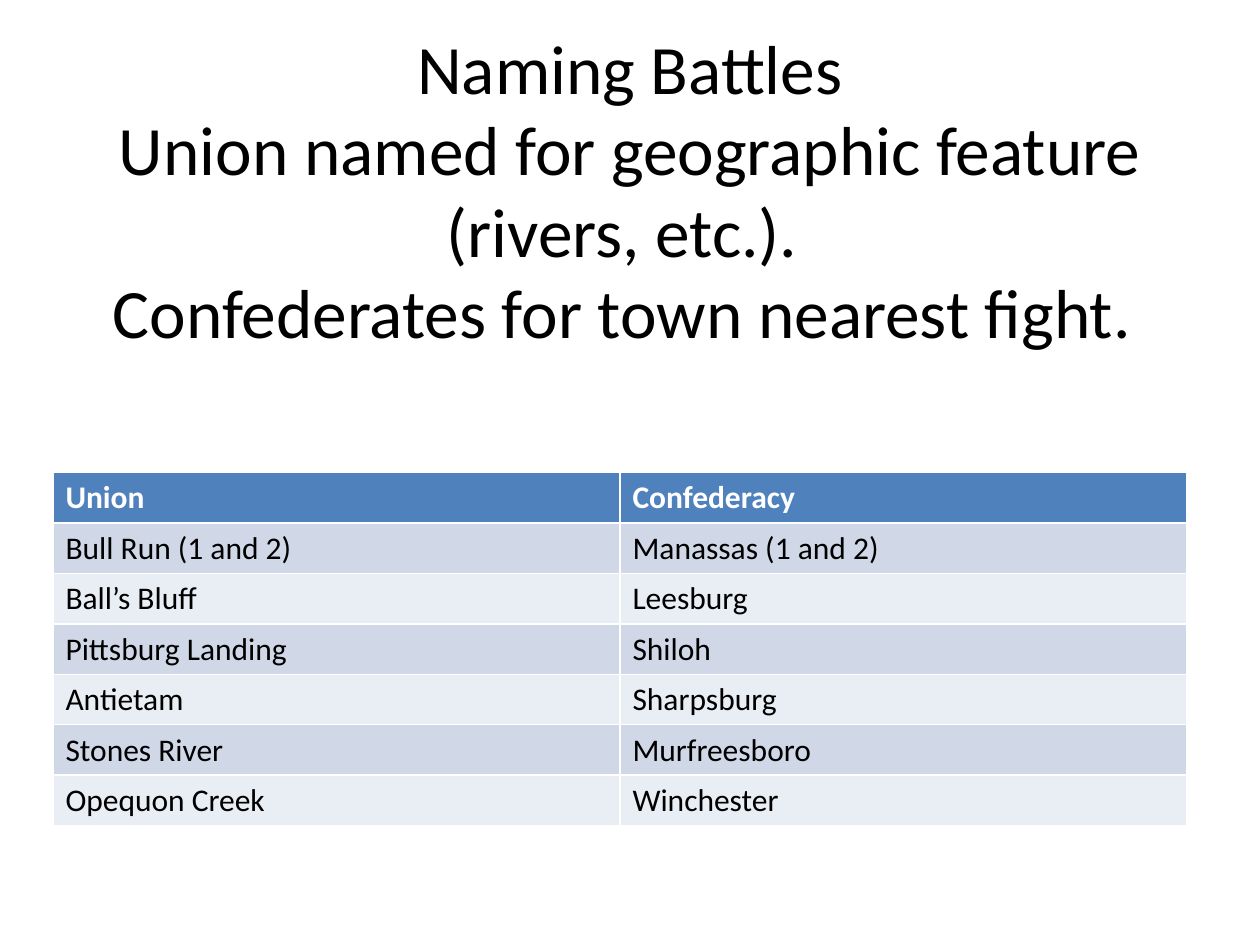
from pptx import Presentation
from pptx.dml.color import RGBColor
from pptx.enum.text import MSO_ANCHOR, PP_ALIGN
from pptx.util import Inches, Pt

CENTER = PP_ALIGN.CENTER
LEFT = PP_ALIGN.LEFT
MIDDLE = MSO_ANCHOR.MIDDLE

FONT = "Calibri"
BLACK = "000000"
WHITE = "FFFFFF"
HEADER_FILL = "4F81BD"
BAND_FILLS = ("D0D8E8", "E9EDF4")

# A vertical tab is a line break within the paragraph
TITLE = "\v".join([
    "Naming Battles",
    "Union named for geographic feature (rivers, etc.). ",
    "Confederates for town nearest fight. ",
])
BATTLES = [
    ("Union", "Confederacy"),
    ("Bull Run (1 and 2)", "Manassas (1 and 2)"),
    ("Ball’s Bluff", "Leesburg"),
    ("Pittsburg Landing", "Shiloh"),
    ("Antietam", "Sharpsburg"),
    ("Stones River", "Murfreesboro"),
    ("Opequon Creek", "Winchester"),
]


def color(hex_string):
    return RGBColor.from_string(hex_string)


def write_text(text_frame, text, size=18, font_color=BLACK, bold=False,
               align=LEFT, line_spacing=None):
    paragraph = text_frame.paragraphs[0]
    paragraph.text = text
    paragraph.alignment = align
    paragraph.line_spacing = line_spacing
    for run in paragraph.runs:
        run.font.name = FONT
        run.font.size = Pt(size)
        run.font.bold = bold
        run.font.color.rgb = color(font_color)


def add_title(slide, text):
    box = slide.shapes.add_textbox(Inches(0.5), Inches(0.3),
                                   Inches(9), Inches(2.45))
    box.text_frame.word_wrap = True
    box.text_frame.vertical_anchor = MIDDLE
    write_text(box.text_frame, text, size=39.6, align=CENTER, line_spacing=0.98)


def add_battle_table(slide, rows):
    # The default table style supplies the white rules between cells
    table = slide.shapes.add_table(len(rows), len(rows[0]), Inches(0.42),
                                   Inches(3.75), Inches(9), Inches(2.8)).table
    for row_index, row in enumerate(rows):
        is_header = row_index == 0
        fill = HEADER_FILL if is_header else BAND_FILLS[(row_index - 1) % 2]
        for column_index, text in enumerate(row):
            cell = table.cell(row_index, column_index)
            cell.fill.solid()
            cell.fill.fore_color.rgb = color(fill)
            write_text(cell.text_frame, text, bold=is_header,
                       font_color=WHITE if is_header else BLACK)


def main():
    presentation = Presentation()
    presentation.slide_width = Inches(10)
    presentation.slide_height = Inches(7.5)
    slide = presentation.slides.add_slide(presentation.slide_layouts[6])
    add_title(slide, TITLE)
    add_battle_table(slide, BATTLES)
    presentation.save("out.pptx")


if __name__ == "__main__":
    main()
